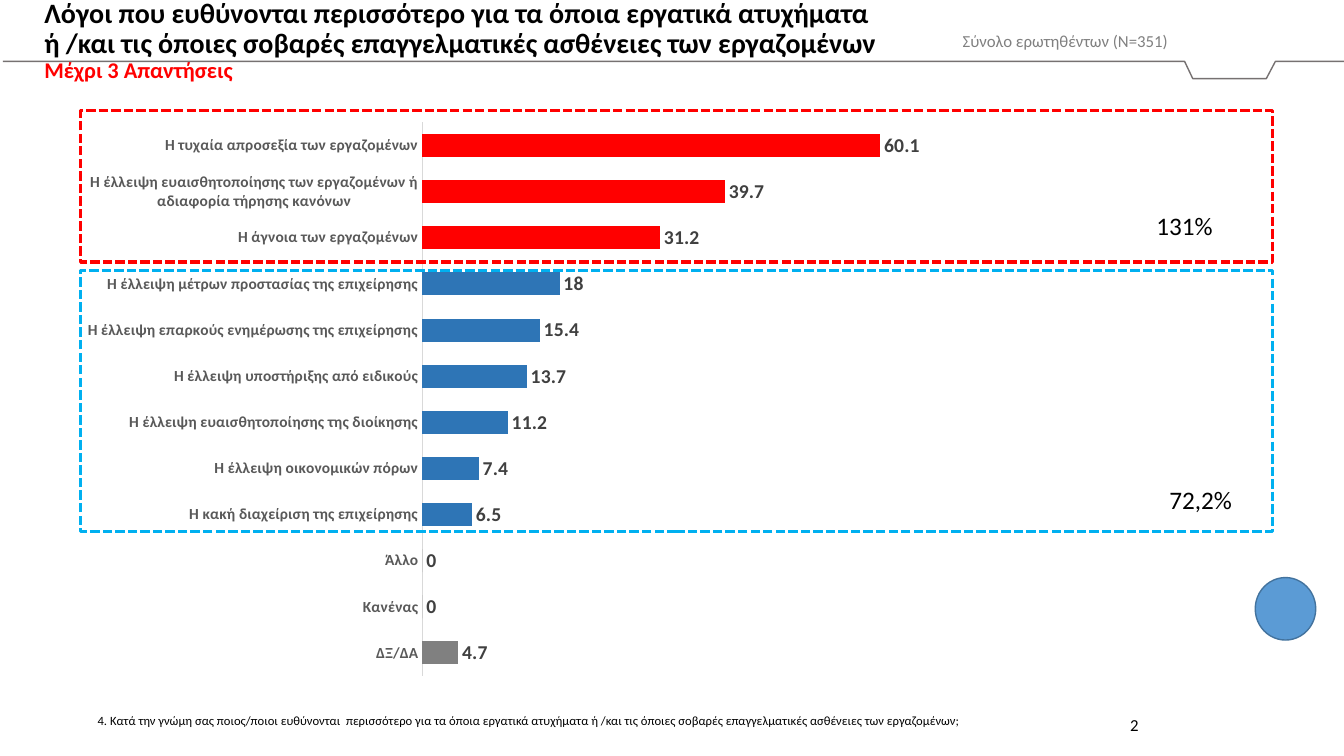
"""Build a slide with a bar chart of the reasons for work accidents."""
import pptx
import pptx.chart.data
import pptx.dml.color
import pptx.enum.chart
import pptx.enum.dml
import pptx.enum.shapes
import pptx.enum.text
import pptx.util
from lxml import etree

PX = 9144
HUES = {
    "black": "000000", "red": "FF0000", "blue": "2E75B6", "sky": "00B0F0",
    "gray": "808080", "dark": "404040", "label": "595959", "axis": "D9D9D9",
    "rule": "767171", "disc": "5B9BD5", "edge": "43739E",
}
REASONS = [
    ("Η τυχαία απροσεξία των εργαζομένων", 60.1, "red"),
    ("Η έλλειψη ευαισθητοποίησης των εργαζομένων ή αδιαφορία τήρησης κανόνων", 39.7, "red"),
    ("Η άγνοια των εργαζομένων", 31.2, "red"),
    ("Η έλλειψη μέτρων προστασίας της επιχείρησης", 18, "blue"),
    ("Η έλλειψη επαρκούς ενημέρωσης της επιχείρησης", 15.4, "blue"),
    ("Η έλλειψη υποστήριξης από ειδικούς", 13.7, "blue"),
    ("Η έλλειψη ευαισθητοποίησης της διοίκησης", 11.2, "blue"),
    ("Η έλλειψη οικονομικών πόρων", 7.4, "blue"),
    ("Η κακή διαχείριση της επιχείρησης", 6.5, "blue"),
    ("Άλλο", 0, "gray"),
    ("Κανένας", 0, "gray"),
    ("ΔΞ/ΔΑ", 4.7, "gray"),
]


def hue(name):
    """Return the named colour."""
    return pptx.dml.color.RGBColor.from_string(HUES[name])


def style(font, size, name, bold=False):
    """Set the face, size, colour and weight of a font."""
    font.name = "Calibri"
    font.size = pptx.util.Pt(size)
    font.bold = bold
    font.color.rgb = hue(name)


deck = pptx.Presentation()
deck.slide_width = 1333 * PX
deck.slide_height = 750 * PX
slide = deck.slides.add_slide(deck.slide_layouts[5])
shapes = slide.shapes

pen = shapes.build_freeform(3, 61, scale=PX)
pen.add_line_segments([(1175, 61), (1183, 78), (1256, 78), (1265, 61), (1333, 61)], close=False)
rule = pen.convert_to_shape()
rule.shadow.inherit = False
rule.fill.background()
rule.line.color.rgb = hue("rule")
rule.line.width = pptx.util.Pt(1)

title = shapes.title
title.left, title.top, title.width, title.height = [n * PX for n in (34, 9, 1157, 64)]
frame = title.text_frame
frame.word_wrap = True
frame.auto_size = pptx.enum.text.MSO_AUTO_SIZE.NONE
frame.vertical_anchor = pptx.enum.text.MSO_ANCHOR.MIDDLE
frame.text = (
    "Λόγοι που ευθύνονται περισσότερο για τα όποια εργατικά ατυχήματα\n"
    "ή /και τις όποιες σοβαρές επαγγελματικές ασθένειες των εργαζομένων\n"
    "Μέχρι 3 Απαντήσεις"
)
for para, size, name in zip(frame.paragraphs, (20, 20, 16), ("black", "black", "red")):
    para.alignment = pptx.enum.text.PP_ALIGN.LEFT
    para.line_spacing = 0.9
    para.space_before = pptx.util.Pt(0)
    style(para.font, size, name, True)

data = pptx.chart.data.CategoryChartData()
data.categories = [reason for reason, value, name in REASONS]
data.add_series("Series 1", [value for reason, value, name in REASONS])
chart = shapes.add_chart(
    pptx.enum.chart.XL_CHART_TYPE.BAR_CLUSTERED,
    87 * PX, 121 * PX, 1104 * PX, 561 * PX, data,
).chart
chart.has_legend = False
chart.has_title = False
style(chart.font, 10, "black")

axis = chart.category_axis
axis.reverse_order = True
axis.has_major_gridlines = False
axis.major_tick_mark = pptx.enum.chart.XL_TICK_MARK.NONE
axis.format.line.color.rgb = hue("axis")
axis.format.line.width = pptx.util.Pt(0.75)
style(axis.tick_labels.font, 11, "label", True)

scale = chart.value_axis
scale.minimum_scale = 0
scale.maximum_scale = 100
scale.major_unit = 20
scale.has_major_gridlines = False
scale.visible = False

plot = chart.plots[0]
plot.gap_width = 100
plot.vary_by_categories = False
bars = plot.series[0]
bars.format.fill.solid()
bars.format.fill.fore_color.rgb = hue("gray")
for i, (reason, value, name) in enumerate(REASONS):
    if name != "gray":
        fill = bars.points[i].format.fill
        fill.solid()
        fill.fore_color.rgb = hue(name)
labels = bars.data_labels
labels.show_value = True
labels.position = pptx.enum.chart.XL_LABEL_POSITION.OUTSIDE_END
style(labels.font, 14, "dark", True)

area = chart._chartSpace.chart.plotArea
for old in area.xpath("c:layout"):
    area.remove(old)
ns = "{http://schemas.openxmlformats.org/drawingml/2006/chart}"
layout = etree.Element(ns + "layout")
manual = etree.SubElement(layout, ns + "manualLayout")
for tag, val in [
    ("layoutTarget", "inner"), ("xMode", "edge"), ("yMode", "edge"),
    ("x", "0.3"), ("y", "0"), ("w", "0.685"), ("h", "0.98"),
]:
    etree.SubElement(manual, ns + tag).set("val", val)
area.insert(0, layout)

for top, high, name in [(110, 150, "red"), (268, 259, "sky")]:
    group = shapes.add_shape(
        pptx.enum.shapes.MSO_SHAPE.RECTANGLE, 80 * PX, top * PX, 1182 * PX, high * PX)
    group.shadow.inherit = False
    group.fill.background()
    group.line.color.rgb = hue(name)
    group.line.width = pptx.util.Pt(2.25)
    group.line.dash_style = pptx.enum.dml.MSO_LINE.SQUARE_DOT

for text, left, top, wide, high, size, name, wrap in [
    ("4. Κατά την γνώμη σας ποιος/ποιοι ευθύνονται  περισσότερο για τα όποια εργατικά ατυχήματα "
     "ή /και τις όποιες σοβαρές επαγγελματικές ασθένειες των εργαζομένων;",
     87, 702, 1033, 24, 9, "black", True),
    ("Σύνολο ερωτηθέντων (N=351)", 945, 26, 230, 30, 12, "gray", False),
    ("131%", 1137, 204, 77, 40, 18, "black", False),
    ("72,2%", 1150, 476, 83, 40, 18, "black", False),
    ("2", 1111, 704, 60, 40, 12, "black", True),
]:
    box = shapes.add_textbox(left * PX, top * PX, wide * PX, high * PX)
    box.text_frame.word_wrap = wrap
    para = box.text_frame.paragraphs[0]
    para.text = text
    style(para.font, size, name)

disc = shapes.add_shape(pptx.enum.shapes.MSO_SHAPE.OVAL, 1245 * PX, 573 * PX, 60 * PX, 62 * PX)
disc.shadow.inherit = False
disc.fill.solid()
disc.fill.fore_color.rgb = hue("disc")
disc.line.color.rgb = hue("edge")
disc.line.width = pptx.util.Pt(1)

deck.save("out.pptx")
